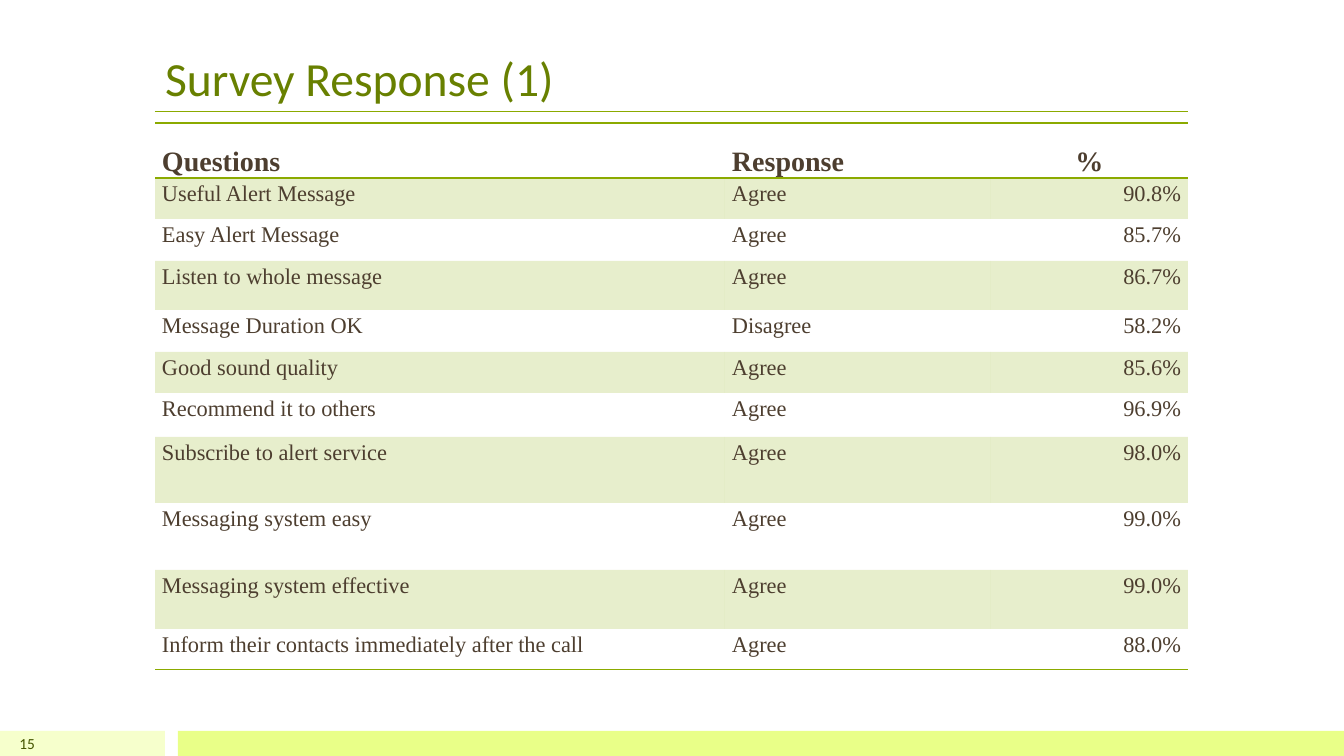
from dataclasses import dataclass

from lxml import etree
from pptx import Presentation
from pptx import util as u
from pptx.dml.color import RGBColor
from pptx.enum import shapes, text
from pptx.oxml import ns


@dataclass(frozen=True)
class Theme:
    heading: str = "688000"
    accent: str = "8BAA00"
    ink: str = "4D3E2F"
    page_ink: str = "455500"
    pale_bar: str = "F6FFCC"
    bright_bar: str = "E9FF88"
    sans: str = "Calibri"
    serif: str = "Times New Roman"
    title_size: int = 34
    header_size: int = 20
    body_size: int = 16
    page_size: int = 11
    band_alpha: int = 20000
    plain_table: str = "{2D5ABB26-0587-4C30-8999-92F81FD0307C}"


THEME = Theme()
LEFT, RIGHT = 155, 1188
COLUMN_WIDTHS = (570, 266, 197)
ROW_HEIGHTS = (55, 41, 42, 49, 42, 41, 44, 66, 67, 59, 41)
ALIGN = text.PP_ALIGN
HEADER = ("Questions", "Response", "%")
ANSWERS = (
    ("Useful Alert Message", "Agree", "90.8%"),
    ("Easy Alert Message", "Agree", "85.7%"),
    ("Listen to whole message", "Agree", "86.7%"),
    ("Message Duration OK", "Disagree", "58.2%"),
    ("Good sound quality", "Agree", "85.6%"),
    ("Recommend it to others", "Agree", "96.9%"),
    ("Subscribe to alert service", "Agree", "98.0%"),
    ("Messaging system easy", "Agree", "99.0%"),
    ("Messaging system effective", "Agree", "99.0%"),
    ("Inform their contacts immediately after the call", "Agree", "88.0%"),
)


def px(length):
    return u.Inches(length / 100.8)


def rgb(colour):
    return RGBColor.from_string(colour)


def write(frame, words, font, size, colour, align=ALIGN.LEFT, bold=False, spacing=None):
    paragraph = frame.paragraphs[0]
    paragraph.alignment = align
    paragraph.line_spacing = spacing
    run = paragraph.add_run()
    run.text = words
    run.font.name = font
    run.font.size = u.Pt(size)
    run.font.bold = bold
    run.font.color.rgb = rgb(colour)


def add_bar(slide, left, width, colour):
    bar = slide.shapes.add_shape(
        shapes.MSO_SHAPE.RECTANGLE, px(left), px(731), px(width), px(25))
    bar.shadow.inherit = False
    bar.fill.solid()
    bar.fill.fore_color.rgb = rgb(colour)
    bar.line.fill.background()


def add_rule(slide, y):
    rule = slide.shapes.add_connector(
        shapes.MSO_CONNECTOR.STRAIGHT, px(LEFT), px(y), px(RIGHT), px(y))
    rule.line.color.rgb = rgb(THEME.accent)
    rule.line.width = u.Pt(0.5)
    etree.SubElement(rule._element.spPr, ns.qn("a:effectLst"))


def set_title(slide, words):
    title = slide.shapes.title
    title.left, title.top = px(LEFT), px(13)
    title.width, title.height = px(RIGHT - LEFT), px(98)
    frame = title.text_frame
    frame.auto_size = text.MSO_AUTO_SIZE.NONE
    frame.vertical_anchor = text.MSO_ANCHOR.BOTTOM
    write(frame, words, THEME.sans, THEME.title_size, THEME.heading)


def add_page_number(slide, number):
    box = slide.shapes.add_textbox(0, px(731), px(45), px(25))
    frame = box.text_frame
    frame.word_wrap = True
    frame.margin_top = frame.margin_bottom = 0
    frame.vertical_anchor = text.MSO_ANCHOR.MIDDLE
    write(frame, number, THEME.sans, THEME.page_size, THEME.page_ink, ALIGN.RIGHT)


def add_border(cell, side):
    line = etree.SubElement(
        cell._tc.get_or_add_tcPr(), ns.qn("a:" + side), w=str(u.Pt(1)))
    fill = etree.SubElement(line, ns.qn("a:solidFill"))
    etree.SubElement(fill, ns.qn("a:srgbClr"), val=THEME.accent)


def fill_band(cell):
    cell.fill.solid()
    cell.fill.fore_color.rgb = rgb(THEME.accent)
    colour = cell._tc.tcPr.find(".//" + ns.qn("a:srgbClr"))
    etree.SubElement(colour, ns.qn("a:alpha"), val=str(THEME.band_alpha))


def format_cell(cell, words, row, column):
    is_header = row == 0
    cell.margin_left = cell.margin_right = px(7)
    cell.margin_top = cell.margin_bottom = 0
    cell.vertical_anchor = text.MSO_ANCHOR.BOTTOM if is_header else text.MSO_ANCHOR.TOP
    if is_header:
        add_border(cell, "lnT")
    if row in (0, len(ANSWERS)):
        add_border(cell, "lnB")
    if row % 2:
        fill_band(cell)
    else:
        cell.fill.background()
    figure_align = ALIGN.CENTER if is_header else ALIGN.RIGHT
    write(cell.text_frame, words, THEME.serif,
          THEME.header_size if is_header else THEME.body_size, THEME.ink,
          figure_align if column == 2 else ALIGN.LEFT,
          is_header, 1.5 if is_header else 1.15)


def add_survey(slide):
    rows = (HEADER, *ANSWERS)
    survey = slide.shapes.add_table(
        len(rows), len(HEADER), px(LEFT), px(123),
        px(sum(COLUMN_WIDTHS)), px(sum(ROW_HEIGHTS))).table
    survey._tbl.tblPr.find(ns.qn("a:tableStyleId")).text = THEME.plain_table
    for column, width in zip(survey.columns, COLUMN_WIDTHS):
        column.width = px(width)
    for row, height in zip(survey.rows, ROW_HEIGHTS):
        row.height = px(height)
    for r, row in enumerate(rows):
        for c, words in enumerate(row):
            format_cell(survey.cell(r, c), words, r, c)


def main():
    deck = Presentation()
    deck.slide_width, deck.slide_height = px(1344), px(756)
    slide = deck.slides.add_slide(deck.slide_layouts[5])
    add_bar(slide, 0, 165, THEME.pale_bar)
    add_bar(slide, 178, 1166, THEME.bright_bar)
    add_rule(slide, 111)
    set_title(slide, "Survey Response (1)")
    add_survey(slide)
    add_page_number(slide, "15")
    deck.save("out.pptx")


if __name__ == "__main__":
    main()
